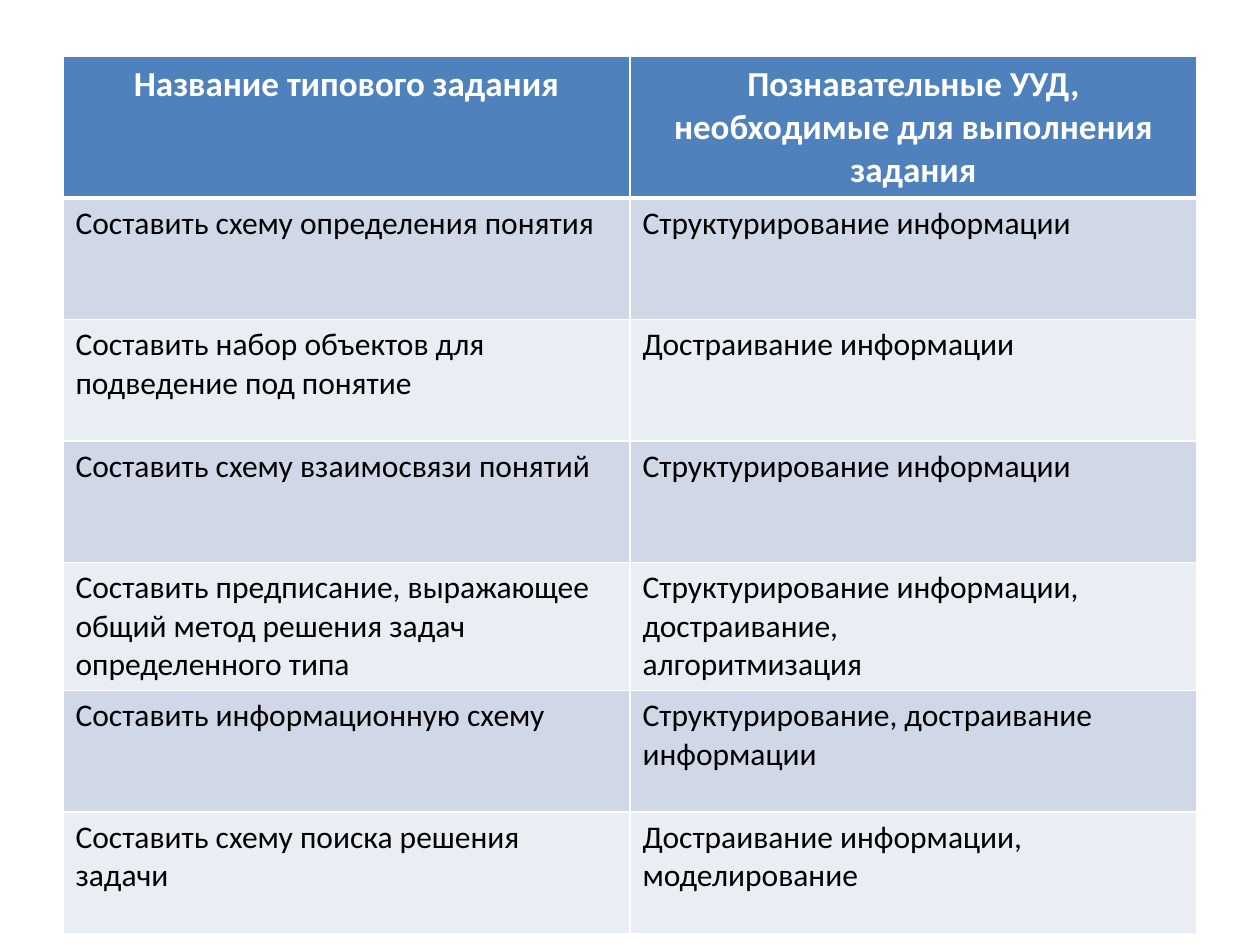
from lxml import etree
from pptx import Presentation
from pptx.dml.color import RGBColor
from pptx.enum.text import PP_ALIGN
from pptx.oxml.ns import qn
from pptx.util import Inches, Pt

CENTER, LEFT = PP_ALIGN.CENTER, PP_ALIGN.LEFT

HEADINGS = ("Название типового задания",
            "Познавательные УУД, необходимые для выполнения задания")
TASKS = (
    ("Составить схему определения понятия", "Структурирование информации"),
    ("Составить набор объектов для подведение под понятие", "Достраивание информации"),
    ("Составить схему взаимосвязи понятий", "Структурирование информации"),
    ("Составить предписание, выражающее общий метод решения задач определенного типа",
     "Структурирование информации,\nдостраивание,\nалгоритмизация"),
    ("Составить информационную схему", "Структурирование, достраивание информации"),
    ("Составить схему поиска решения задачи", "Достраивание информации, моделирование"),
)


def color(value):
    return RGBColor.from_string(value)


class TaskSlide:
    font = "Calibri"
    white, black, header_fill = "FFFFFF", "000000", "4F81BD"
    bands = ("D0D8E8", "E9EDF4")

    def __init__(self, deck):
        self.width, self.height = deck.slide_width, deck.slide_height
        self.slide = deck.slides.add_slide(deck.slide_layouts[6])

    def table(self, rows, left, top, width, height):
        frame = self.slide.shapes.add_table(
            len(rows), len(rows[0]),
            round(left * self.width), round(top * self.height),
            round(width * self.width), round(height * self.height))
        for row_index, texts in enumerate(rows):
            for column_index, text in enumerate(texts):
                cell = frame.table.cell(row_index, column_index)
                self.cell(cell, text, row_index)

    def cell(self, cell, text, row_index):
        header = row_index == 0
        fill = self.header_fill if header else self.bands[(row_index - 1) % 2]
        cell.fill.solid()
        cell.fill.fore_color.rgb = color(fill)
        cell.text_frame.text = text
        for para in cell.text_frame.paragraphs:
            para.alignment = CENTER if header else LEFT
            for span in para.runs:
                span.font.name = self.font
                span.font.size = Pt(20 if header else 18)
                span.font.bold = header
                span.font.color.rgb = color(self.white if header else self.black)
        self.borders(cell, top=3 if row_index == 1 else 1, bottom=3 if header else 1)

    def borders(self, cell, top, bottom):
        properties = cell._tc.get_or_add_tcPr()
        widths = (("L", 1), ("R", 1), ("T", top), ("B", bottom))
        for position, (side, width) in enumerate(widths):
            line = etree.Element(qn(f"a:ln{side}"), w=str(Pt(width)))
            fill = etree.SubElement(line, qn("a:solidFill"))
            etree.SubElement(fill, qn("a:srgbClr"), val=self.white)
            properties.insert(position, line)


def main():
    deck = Presentation()
    deck.slide_width, deck.slide_height = Inches(10), Inches(7.5)
    page = TaskSlide(deck)
    page.table((HEADINGS, *TASKS), left=0.05, top=0.06, width=0.9, height=0.9)
    deck.save("out.pptx")


if __name__ == "__main__":
    main()
